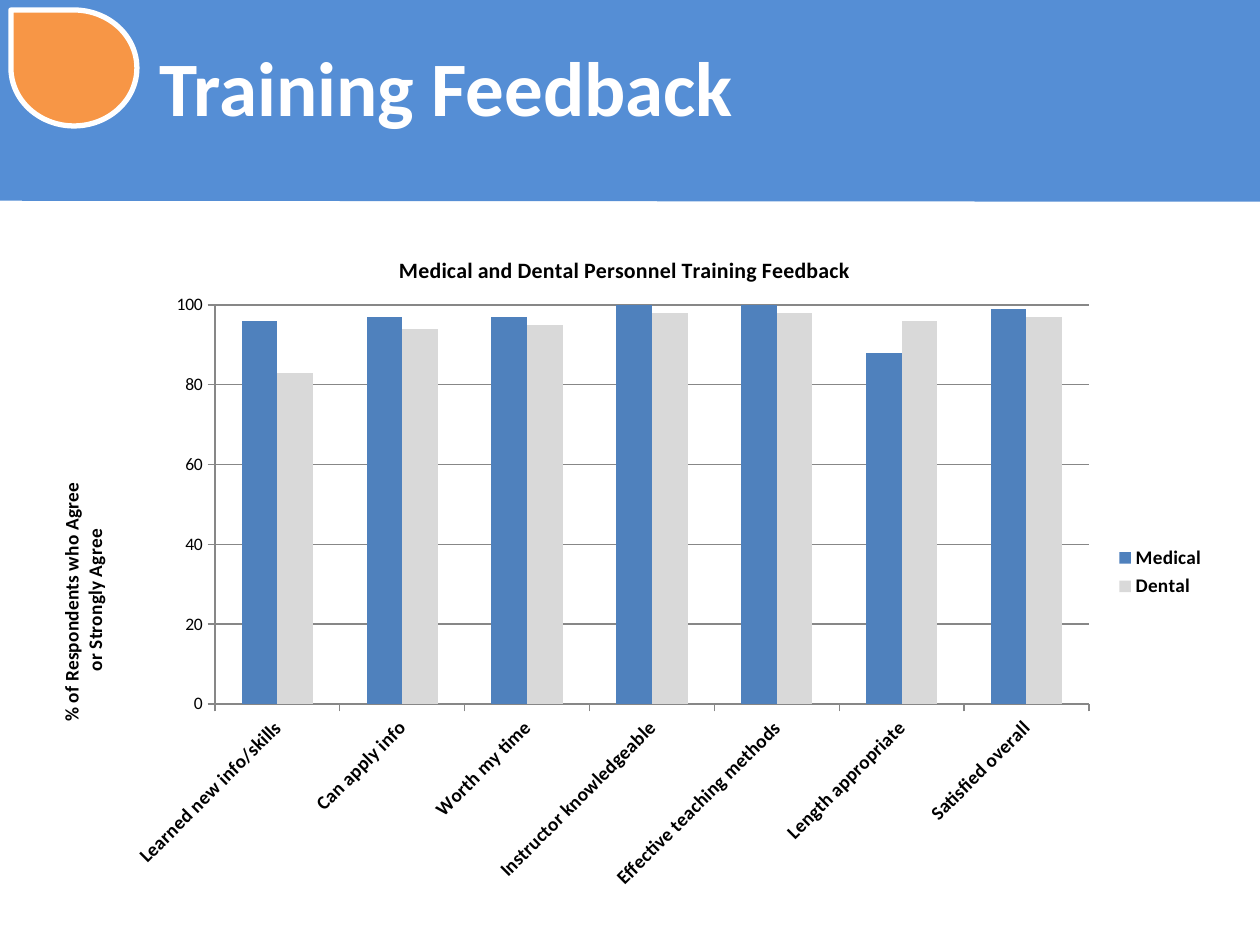
from dataclasses import dataclass

from lxml import etree
from pptx import Presentation
from pptx import util as u
from pptx.chart.data import CategoryChartData
from pptx.dml.color import RGBColor
from pptx.enum import chart as ch, shapes, text
from pptx.oxml.ns import qn

PX = 914400 / 126
CHART_BOX = (32, 231, 1187, 683)


@dataclass(frozen=True)
class Theme:
    """Colours, font and type sizes of the slide."""
    font: str = "Calibri"
    banner: str = "558ED5"
    drop: str = "F79646"
    light: str = "FFFFFF"
    ink: str = "000000"
    grid: str = "878787"
    medical: str = "4F81BD"
    dental: str = "D9D9D9"
    headline: float = 44
    chart_title: float = 12.5
    label: float = 11
    tick: float = 10


THEME = Theme()
QUESTIONS = ["Learned new info/skills", "Can apply info", "Worth my time",
             "Instructor knowledgeable", "Effective teaching methods",
             "Length appropriate", "Satisfied overall"]
FEEDBACK = {
    "Medical": (THEME.medical, [96, 97, 97, 100, 100, 88, 99]),
    "Dental": (THEME.dental, [83, 94, 95, 98, 98, 96, 97]),
}


def px(*lengths):
    """Turn pixel lengths into EMU."""
    return [u.Emu(round(length * PX)) for length in lengths]


def rgb(value):
    """Return a colour from its hex value."""
    return RGBColor.from_string(value)


def style(font, size, bold=False, color=THEME.ink):
    """Set the typeface, size, weight and colour of a font."""
    font.name = THEME.font
    font.size = u.Pt(size)
    font.bold = bold
    font.color.rgb = rgb(color)


def add_block(slide, preset, box, fill, outline=None):
    """Add a filled preset shape with an optional outline."""
    block = slide.shapes.add_shape(preset, *px(*box))
    block.shadow.inherit = False
    block.fill.solid()
    block.fill.fore_color.rgb = rgb(fill)
    if outline:
        block.line.color.rgb = rgb(outline)
        block.line.width = u.Pt(3)
    else:
        block.line.fill.background()
    return block


def add_rule(slide, start, end, color):
    """Add a straight line without a shadow."""
    rule = slide.shapes.add_connector(
        shapes.MSO_CONNECTOR.STRAIGHT, *px(*start, *end))
    rule.line.color.rgb = rgb(color)
    rule.line.width = u.Pt(2)
    etree.SubElement(rule._element.spPr, qn("a:effectLst"))


def add_headline(slide, words, box):
    """Add the slide headline."""
    frame = slide.shapes.add_textbox(*px(*box)).text_frame
    frame.word_wrap = True
    frame.vertical_anchor = text.MSO_ANCHOR.MIDDLE
    frame.text = words
    style(frame.paragraphs[0].runs[0].font, THEME.headline, True, THEME.light)


def place(part, index, *box):
    """Lay out a chart part at a pixel box inside the chart."""
    for old in part.findall(qn("c:layout")):
        part.remove(old)
    layout = etree.Element(qn("c:layout"))
    part.insert(index, layout)
    manual = etree.SubElement(layout, qn("c:manualLayout"))
    settings = {"layoutTarget": "inner"} if len(box) == 4 else {}
    settings.update(xMode="edge", yMode="edge")
    for name, length, whole in zip("xywh", box, CHART_BOX[2:] * 2):
        settings[name] = length / whole
    for name, value in settings.items():
        etree.SubElement(manual, qn(f"c:{name}")).set("val", str(value))


def set_title(owner, words, size, x, y):
    """Write and place the title of a chart or an axis."""
    owner.has_title = True
    title = owner.chart_title if hasattr(owner, "chart_title") else owner.axis_title
    frame = title.text_frame
    frame.text = words
    for paragraph in frame.paragraphs:
        style(paragraph.font, size, True)
        for run in paragraph.runs:
            style(run.font, size, True)
    place(title._element, 1, x, y)
    return frame


def rotate(body, degrees):
    """Turn a chart text body by an angle."""
    body.set("rot", str(degrees * 60000))
    body.set("vert", "horz")


def style_axes(chart):
    """Format both axes, their labels and the gridlines."""
    scores, questions = chart.value_axis, chart.category_axis
    scores.minimum_scale, scores.maximum_scale, scores.major_unit = 0, 100, 20
    scores.has_major_gridlines = True
    for line in (scores.format.line, questions.format.line,
                 scores.major_gridlines.format.line):
        line.color.rgb = rgb(THEME.grid)
        line.width = u.Pt(0.75)
    for axis in (scores, questions):
        axis.major_tick_mark = ch.XL_TICK_MARK.OUTSIDE
        axis.minor_tick_mark = ch.XL_TICK_MARK.NONE
    style(scores.tick_labels.font, THEME.tick)
    style(questions.tick_labels.font, THEME.label, True)
    rotate(questions._element.find(qn("c:txPr")).find(qn("a:bodyPr")), -45)
    caption = set_title(scores, "% of Respondents who Agree\n or Strongly Agree",
                        THEME.label, 22, 248)
    rotate(caption._txBody.find(qn("a:bodyPr")), -90)


def add_feedback_chart(slide):
    """Add the clustered columns with their title and legend."""
    data = CategoryChartData()
    data.categories = QUESTIONS
    for group, (_, scores) in FEEDBACK.items():
        data.add_series(group, scores)
    chart = slide.shapes.add_chart(
        ch.XL_CHART_TYPE.COLUMN_CLUSTERED, *px(*CHART_BOX), data).chart
    style(chart.font, THEME.tick)
    set_title(chart, "Medical and Dental Personnel Training Feedback",
              THEME.chart_title, 363, 20)
    style_axes(chart)
    columns = chart.plots[0]
    columns.vary_by_categories = False
    columns.gap_width, columns.overlap = 150, 0
    for series, (color, _) in zip(columns.series, FEEDBACK.values()):
        series.format.fill.solid()
        series.format.fill.fore_color.rgb = rgb(color)
    chart.has_legend = True
    chart.legend.position = ch.XL_LEGEND_POSITION.RIGHT
    chart.legend.include_in_layout = False
    style(chart.legend.font, THEME.label, True)
    place(chart.legend._element, 1, 1081, 310)
    place(chart._chartSpace.chart.plotArea, 0, 183, 74, 874, 399)


def main():
    """Build the training feedback slide."""
    deck = Presentation()
    deck.slide_width, deck.slide_height = px(1260, 945)
    slide = deck.slides.add_slide(deck.slide_layouts[6])
    add_block(slide, shapes.MSO_SHAPE.RECTANGLE, (0, 0, 1260, 199), THEME.banner)
    drop = add_block(slide, shapes.MSO_SHAPE.TEAR, (11, 10, 126, 116),
                     THEME.drop, THEME.light)
    drop._element.spPr.find(qn("a:xfrm")).set("flipH", "1")
    add_rule(slide, (0, 199), (1260, 200), THEME.banner)
    add_headline(slide, "Training Feedback", (147, 21, 1061, 130))
    add_feedback_chart(slide)
    deck.save("out.pptx")


if __name__ == "__main__":
    main()
